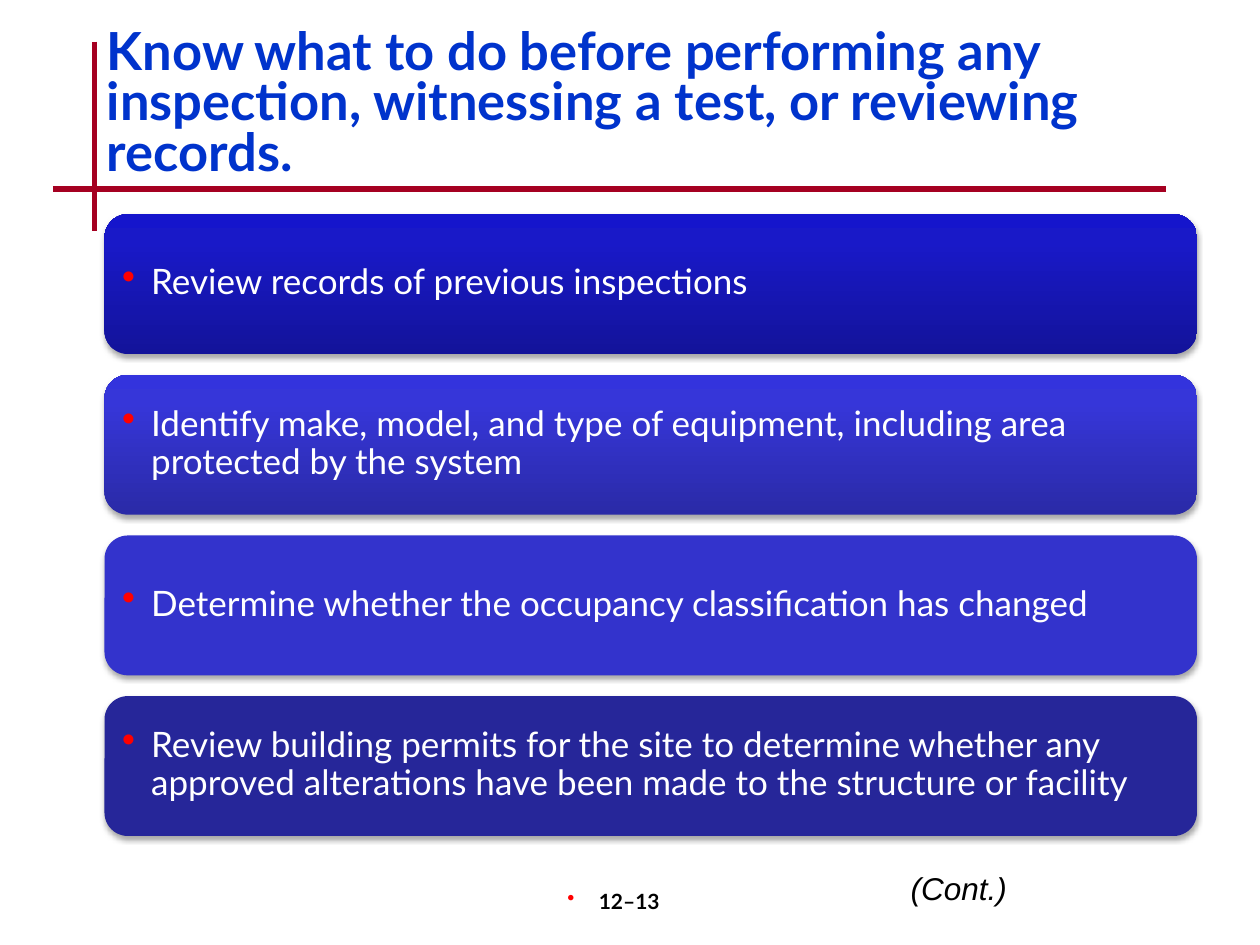
from lxml import etree
from pptx import Presentation
from pptx.dml.color import RGBColor
from pptx.enum.shapes import MSO_CONNECTOR, MSO_SHAPE
from pptx.enum.text import MSO_ANCHOR, PP_ALIGN
from pptx.oxml import parse_xml
from pptx.oxml.ns import nsdecls, qn
from pptx.util import Inches, Pt


def rgb(value):
    return RGBColor.from_string(value)


def add_text(text, left, top, width, height, size=20, color="000000", font="Lato",
             bold=False, italic=False, align=PP_ALIGN.LEFT, anchor=MSO_ANCHOR.TOP,
             insets=(0.1, 0.05, 0.1, 0.05), spacing=None, hanging=0, bullet_size=None):
    box = slide.shapes.add_textbox(Inches(left), Inches(top), Inches(width), Inches(height))
    frame = box.text_frame
    frame.word_wrap = True
    frame.vertical_anchor = anchor
    (frame.margin_left, frame.margin_top,
     frame.margin_right, frame.margin_bottom) = [Inches(inset) for inset in insets]
    paragraph = frame.paragraphs[0]
    paragraph.alignment = align
    if spacing:
        paragraph.line_spacing = spacing
    properties = paragraph._p.get_or_add_pPr()
    if hanging:
        properties.set("marL", str(Inches(hanging)))
        properties.set("indent", str(-Inches(hanging)))
    if bullet_size:
        for xml in ('<a:buClr {}><a:srgbClr val="FF0000"/></a:buClr>',
                    f'<a:buSzPct {{}} val="{bullet_size * 1000}"/>',
                    '<a:buChar {} char="•"/>'):
            properties.append(parse_xml(xml.format(nsdecls("a"))))
    run = paragraph.add_run()
    run.text = text
    run.font.name = font
    run.font.size = Pt(size)
    run.font.bold = bold
    run.font.italic = italic
    run.font.color.rgb = rgb(color)


presentation = Presentation()
presentation.slide_width = Inches(10)
presentation.slide_height = Inches(7.5)
slide = presentation.slides.add_slide(presentation.slide_layouts[6])

# Crossed rules beside and below the title
for x1, y1, x2, y2 in [(0.75, 0.33, 0.75, 1.83), (0.42, 1.5, 9.25, 1.5)]:
    rule = slide.shapes.add_connector(
        MSO_CONNECTOR.STRAIGHT, Inches(x1), Inches(y1), Inches(x2), Inches(y2))
    rule.line.color.rgb = rgb("A50021")
    rule.line.width = Pt(3)
    etree.SubElement(rule._element.spPr, qn("a:effectLst"))

# Page number and title
add_text("12–13", 3.92, 7, 2.08, 0.5, size=12, bold=True, align=PP_ALIGN.CENTER,
         insets=(0.1, 0.05, 0.28, 0.05), hanging=0.25, bullet_size=100)
add_text("Know what to do before performing any inspection, witnessing a test, "
         "or reviewing records.", 0.75, 0.19, 8.5, 1, size=30, color="0033CC",
         bold=True, spacing=0.8)

# Step panels: one colour is a solid fill, three run from bottom to top
steps = [
    ("Review records of previous inspections", ["13139A", "1919C8", "1515CC"]),
    ("Identify make, model, and type of equipment, including area protected by the system",
     ["2A2AA7", "3636D9", "3333DD"]),
    ("Determine whether the occupancy classification has changed", ["3333CC"]),
    ("Review building permits for the site to determine whether any approved alterations "
     "have been made to the structure or facility", ["262699"]),
]
for index, (step, colors) in enumerate(steps):
    top = 1.7 + index * 1.275
    panel = slide.shapes.add_shape(
        MSO_SHAPE.ROUNDED_RECTANGLE, Inches(0.83), Inches(top), Inches(8.67), Inches(1.11))
    panel.line.fill.background()
    if len(colors) == 1:
        panel.fill.solid()
        panel.fill.fore_color.rgb = rgb(colors[0])
    else:
        panel.fill.gradient()
        panel.fill.gradient_angle = 90
        stops = panel._element.spPr.find(".//" + qn("a:gsLst"))
        for stop in list(stops):
            stops.remove(stop)
        for position, color in zip((0, 80, 100), colors):
            stops.append(parse_xml(
                f'<a:gs {nsdecls("a")} pos="{position * 1000}"><a:srgbClr val="{color}"/></a:gs>'))
    panel.shadow.inherit = False
    panel._element.spPr.find(qn("a:effectLst")).append(parse_xml(
        f'<a:outerShdw {nsdecls("a")} blurRad="{Pt(3.1)}" dist="{Pt(1.8)}" dir="5400000" '
        'rotWithShape="0"><a:srgbClr val="000000"><a:alpha val="35000"/></a:srgbClr>'
        '</a:outerShdw>'))
    add_text(step, 0.89, top + 0.05, 8.56, 1, color="FFFFFF", anchor=MSO_ANCHOR.MIDDLE,
             insets=(0.08,) * 4, spacing=0.9, hanging=0.23, bullet_size=110)

# Continuation note
add_text("(Cont.)", 6.42, 6.85, 1.67, 0.4, size=18, font="Arial", italic=True,
         align=PP_ALIGN.RIGHT, hanging=0.38)

presentation.save("out.pptx")
